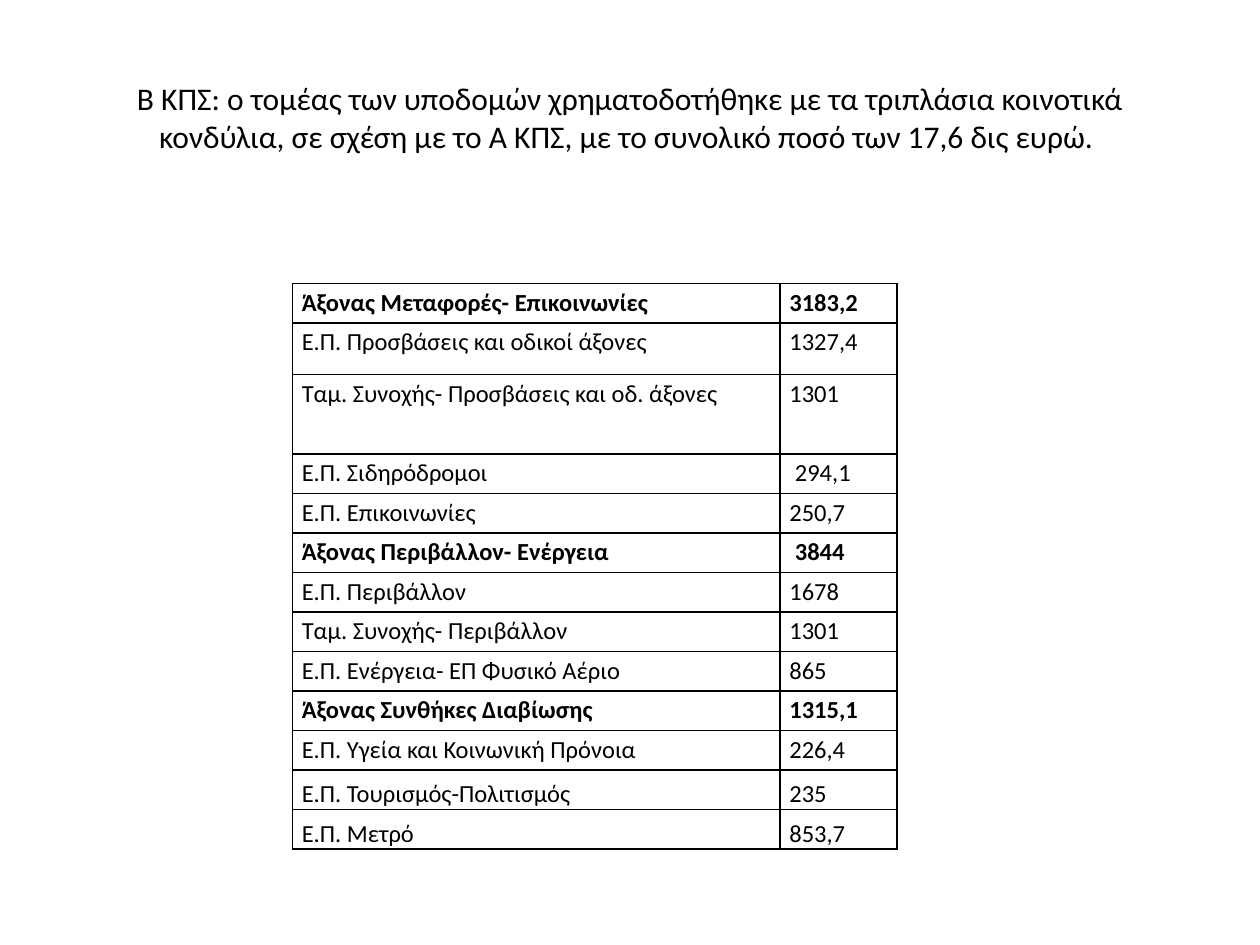
from pptx import Presentation
from pptx.dml.color import RGBColor
from pptx.enum.text import MSO_ANCHOR as Anchor, PP_ALIGN as Align
from pptx.oxml import parse_xml
from pptx.oxml.ns import nsdecls
from pptx.util import Pt

FONT = "Calibri"
BLACK = "000000"
ROW_H = 22.58
TALL_ROWS = {1: 29.5, 2: 45.36}
COL_WIDTHS = (278.64, 66.96)

TITLE = ("Β ΚΠΣ: ο τομέας των υποδομών χρηματοδοτήθηκε με τα τριπλάσια κοινοτικά "
         "κονδύλια, σε σχέση με το Α ΚΠΣ, με το συνολικό ποσό των 17,6 δις ευρώ. ")

# Programme and amount; the "Άξονας" rows are the bold group headings
BUDGET = [
    ("Άξονας Μεταφορές- Επικοινωνίες", "3183,2"),
    ("Ε.Π. Προσβάσεις και οδικοί άξονες", "1327,4"),
    ("Ταμ. Συνοχής- Προσβάσεις και οδ. άξονες", "1301"),
    ("Ε.Π. Σιδηρόδρομοι", " 294,1"),
    ("Ε.Π. Επικοινωνίες", "250,7"),
    ("Άξονας Περιβάλλον- Ενέργεια", " 3844"),
    ("Ε.Π. Περιβάλλον", "1678"),
    ("Ταμ. Συνοχής- Περιβάλλον", "1301"),
    ("Ε.Π. Ενέργεια- ΕΠ Φυσικό Αέριο", "865"),
    ("Άξονας Συνθήκες Διαβίωσης", "1315,1"),
    ("Ε.Π. Υγεία και Κοινωνική Πρόνοια", "226,4"),
    ("Ε.Π. Τουρισμός-Πολιτισμός", "235"),
    ("Ε.Π. Μετρό", "853,7"),
]
BOTTOM_ROWS = 2  # closing rows whose text sits at the bottom


def rgb(color):
    return RGBColor.from_string(color)


def add_run(p, text, size, bold=False):
    r = p.add_run()
    r.text = text
    r.font.name = FONT
    r.font.size = Pt(size)
    r.font.bold = bold
    r.font.color.rgb = rgb(BLACK)


def add_title(slide):
    sp = slide.shapes.title
    sp.left, sp.top, sp.width, sp.height = Pt(36), Pt(21.6), Pt(648), Pt(90)
    tf = sp.text_frame
    tf.vertical_anchor = Anchor.MIDDLE
    p = tf.paragraphs[0]
    p.alignment = Align.CENTER
    add_run(p, TITLE, 18)


def set_borders(cell, color=BLACK, width=1):
    tc_pr = cell._tc.get_or_add_tcPr()
    for side in ("lnL", "lnR", "lnT", "lnB"):
        tc_pr.append(parse_xml(
            f'<a:{side} {nsdecls("a")} w="{Pt(width)}"><a:solidFill>'
            f'<a:srgbClr val="{color}"/></a:solidFill></a:{side}>'))


def fill_cell(cell, text, bold, anchor):
    set_borders(cell)
    cell.fill.background()
    cell.margin_left = cell.margin_right = Pt(5.4)
    cell.margin_top = cell.margin_bottom = Pt(0)
    cell.vertical_anchor = anchor
    p = cell.text_frame.paragraphs[0]
    p.alignment = Align.JUSTIFY
    p.line_spacing = 1.15
    add_run(p, text, 14, bold)


def add_budget_table(slide):
    heights = [TALL_ROWS.get(i, ROW_H) for i in range(len(BUDGET))]
    table = slide.shapes.add_table(
        len(BUDGET), len(COL_WIDTHS), Pt(167.04), Pt(162),
        Pt(sum(COL_WIDTHS)), Pt(sum(heights))).table
    table.first_row = table.horz_banding = False
    for column, width in zip(table.columns, COL_WIDTHS):
        column.width = Pt(width)
    for i, (row, texts) in enumerate(zip(table.rows, BUDGET)):
        row.height = Pt(heights[i])
        bold = texts[0].startswith("Άξονας")
        anchor = Anchor.BOTTOM if i >= len(BUDGET) - BOTTOM_ROWS else Anchor.TOP
        for cell, text in zip(row.cells, texts):
            fill_cell(cell, text, bold, anchor)


def main():
    prs = Presentation()
    prs.slide_width, prs.slide_height = Pt(720), Pt(540)
    slide = prs.slides.add_slide(prs.slide_layouts[5])  # title only
    add_title(slide)
    add_budget_table(slide)
    prs.save("out.pptx")


if __name__ == "__main__":
    main()
